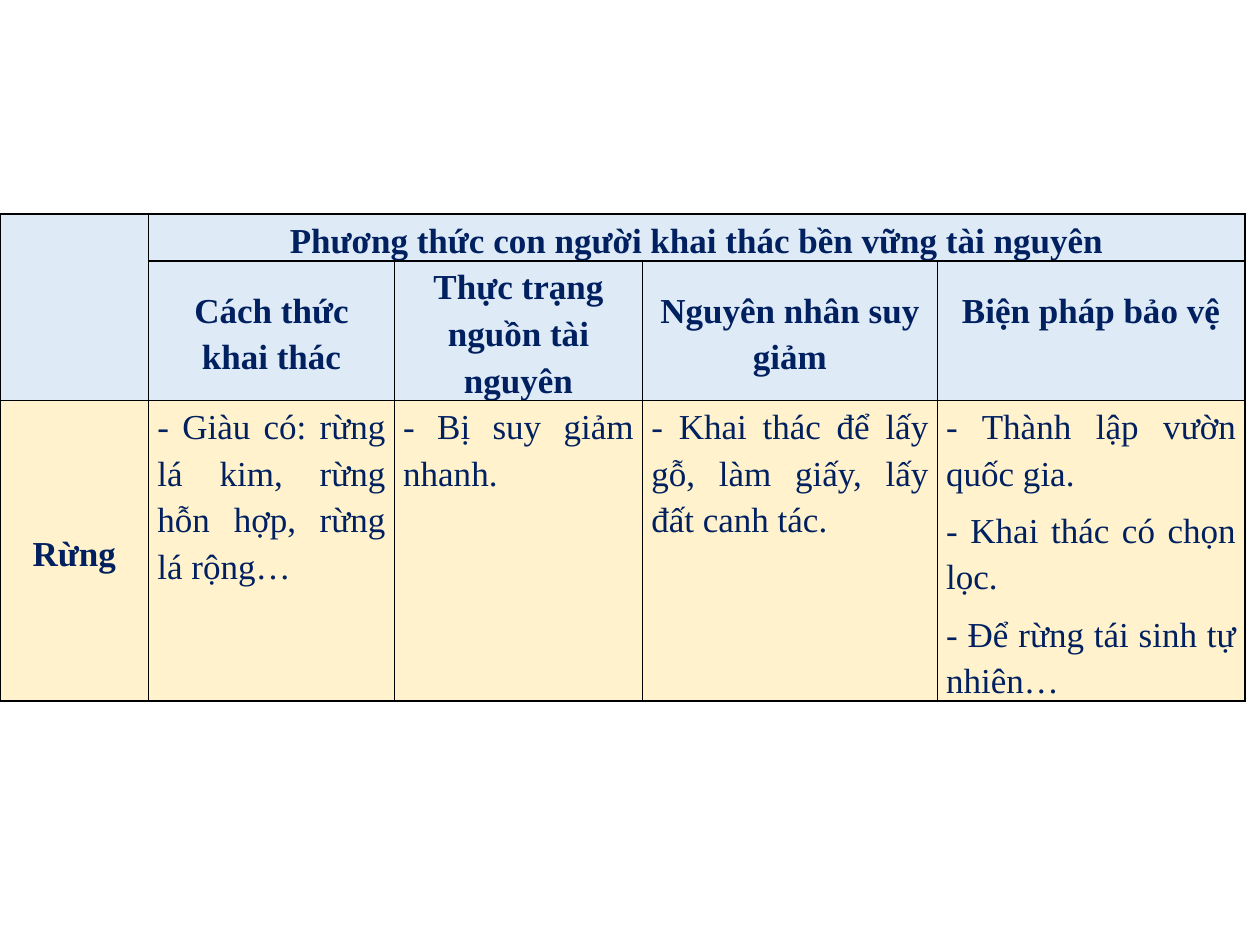
from dataclasses import dataclass

from lxml import etree
from pptx import Presentation
from pptx.dml.color import RGBColor
from pptx.enum.text import MSO_ANCHOR, PP_ALIGN
from pptx.oxml.ns import qn
from pptx.table import Table, _Cell
from pptx.util import Inches, Pt

CENTER, JUSTIFY = PP_ALIGN.CENTER, PP_ALIGN.JUSTIFY
TOP, MIDDLE = MSO_ANCHOR.TOP, MSO_ANCHOR.MIDDLE
COLORS = {"header": "DEEAF6", "body": "FFF2CC", "text": "002060", "border": "000000"}
FONT = "Times New Roman"
COLUMN_WIDTHS = [1.18, 1.95, 1.97, 2.34, 2.44]
ROW_HEIGHTS = [0.37, 1.11, 2.38]


@dataclass
class Entry:
    row: int
    column: int
    lines: list[str]
    heading: bool = True
    anchor: MSO_ANCHOR = MIDDLE
    bottom: float = 0


ENTRIES = [
    Entry(0, 1, ["Phương thức con người khai thác bền vững tài nguyên"], anchor=TOP),
    Entry(1, 1, ["Cách thức khai thác"]),
    Entry(1, 2, ["Thực trạng nguồn tài nguyên"]),
    Entry(1, 3, ["Nguyên nhân suy giảm"]),
    Entry(1, 4, ["Biện pháp bảo vệ"], bottom=0.37),
    Entry(2, 0, ["Rừng"]),
    Entry(2, 1, ["- Giàu có: rừng lá kim, rừng hỗn hợp, rừng lá rộng…"], False, TOP),
    Entry(2, 2, ["- Bị suy giảm nhanh."], False, TOP),
    Entry(2, 3, ["- Khai thác để lấy gỗ, làm giấy, lấy đất canh tác."], False, TOP),
    Entry(2, 4, ["- Thành lập vườn quốc gia.", "- Khai thác có chọn lọc.",
                 "- Để rừng tái sinh tự nhiên…"], False, TOP),
]


def style_cell(cell: _Cell, fill: str) -> None:
    cell.margin_left = cell.margin_right = Inches(0.07)
    cell.margin_top = cell.margin_bottom = 0
    properties = cell._tc.get_or_add_tcPr()
    for side in ("a:lnL", "a:lnR", "a:lnT", "a:lnB"):
        line = etree.SubElement(properties, qn(side), w=str(Pt(1)))
        solid = etree.SubElement(line, qn("a:solidFill"))
        etree.SubElement(solid, qn("a:srgbClr"), val=COLORS["border"])
    cell.fill.solid()
    cell.fill.fore_color.rgb = RGBColor.from_string(COLORS[fill])


def write_entry(table: Table, entry: Entry) -> None:
    cell = table.cell(entry.row, entry.column)
    cell.vertical_anchor = entry.anchor
    cell.margin_bottom = Inches(entry.bottom)
    cell.text = "\n".join(entry.lines)
    for para in cell.text_frame.paragraphs:
        para.alignment = CENTER if entry.heading else JUSTIFY
        para.line_spacing = 1.2
        para.space_before = Pt(6)
        para.font.name = FONT
        para.font.size = Pt(20)
        para.font.bold = entry.heading
        para.font.color.rgb = RGBColor.from_string(COLORS["text"])


def main() -> None:
    deck = Presentation()
    deck.slide_width, deck.slide_height = Inches(10), Inches(7.5)
    page = deck.slides.add_slide(deck.slide_layouts[6])
    table = page.shapes.add_table(
        len(ROW_HEIGHTS), len(COLUMN_WIDTHS), 0, Inches(1.7),
        Inches(sum(COLUMN_WIDTHS)), Inches(sum(ROW_HEIGHTS))).table
    table.first_row = table.horz_banding = False
    for column, width in zip(table.columns, COLUMN_WIDTHS):
        column.width = Inches(width)
    for index, (row, height) in enumerate(zip(table.rows, ROW_HEIGHTS)):
        row.height = Inches(height)
        for cell in row.cells:
            style_cell(cell, "header" if index < 2 else "body")
    table.cell(0, 0).merge(table.cell(1, 0))
    table.cell(0, 1).merge(table.cell(0, 4))
    for entry in ENTRIES:
        write_entry(table, entry)
    deck.save("out.pptx")


if __name__ == "__main__":
    main()
